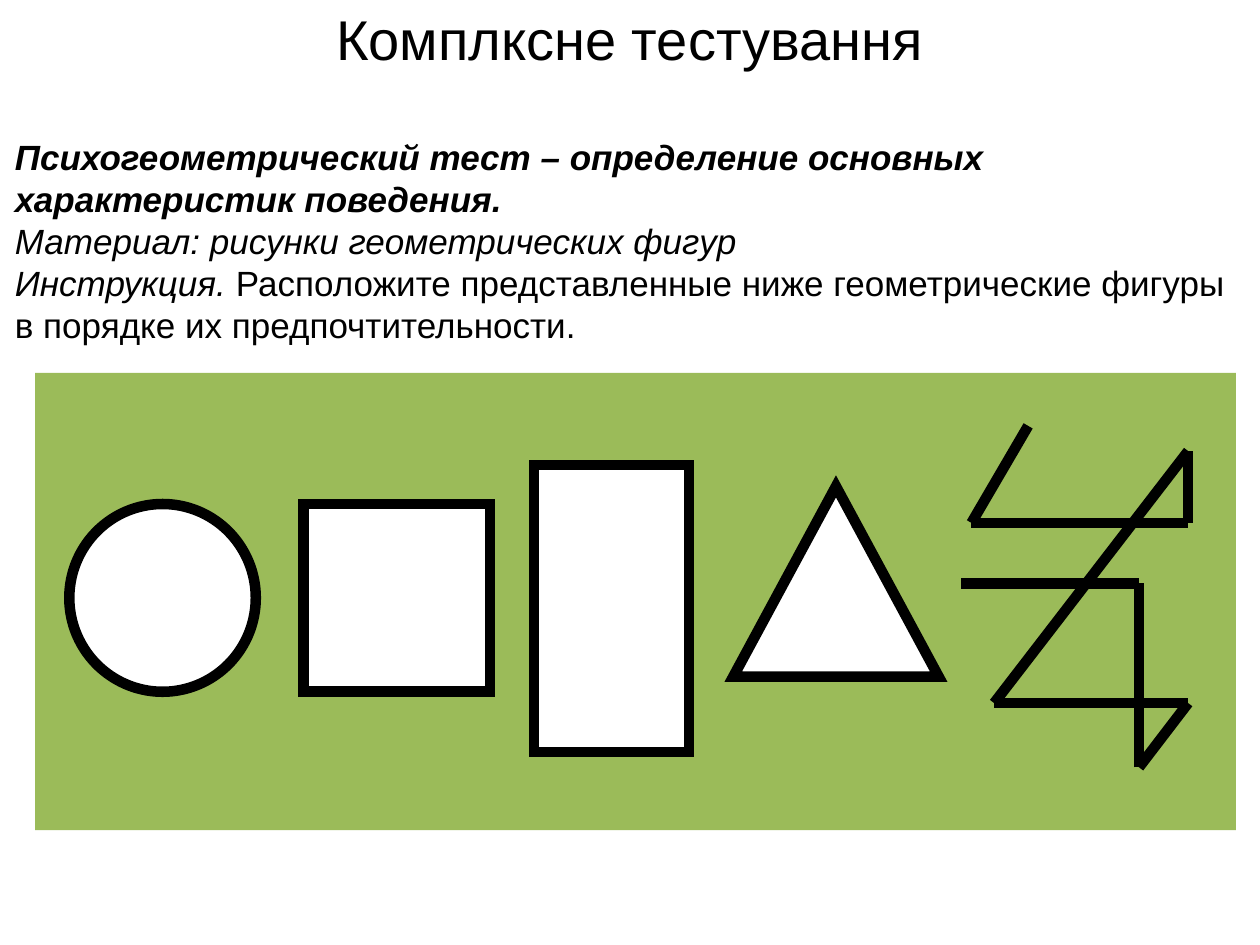
from dataclasses import dataclass
from itertools import pairwise

from lxml.etree import SubElement
from pptx import Presentation
from pptx.dml.color import RGBColor
from pptx.enum.shapes import MSO_CONNECTOR, MSO_SHAPE
from pptx.enum.text import MSO_ANCHOR, PP_ALIGN
from pptx.oxml.ns import qn
from pptx.util import Inches, Pt


@dataclass(frozen=True)
class Theme:
    """Colours, font and sizes of the slide."""
    ink: RGBColor = RGBColor.from_string("000000")
    paper: RGBColor = RGBColor.from_string("FFFFFF")
    field: RGBColor = RGBColor.from_string("9BBB59")
    font: str = "Arial"
    title: int = 32
    body: int = 20
    stroke: int = 6


THEME = Theme()
WIDTH, HEIGHT = Inches(10), Inches(7.5)
COLS, ROWS = 100, 75


def grid(col, row):
    """Turn a column and a row into a point on the slide."""
    return round(WIDTH * col / COLS), round(HEIGHT * row / ROWS)


def box(col, row, cols, rows):
    """Turn a block of grid cells into left, top, width and height."""
    return *grid(col, row), *grid(cols, rows)


def write(slide, area, paras, size, align=PP_ALIGN.LEFT):
    """Add a text box whose paragraphs are lists of (text, bold, italic)."""
    frame = slide.shapes.add_textbox(*box(*area)).text_frame
    frame.word_wrap = True
    frame.vertical_anchor = MSO_ANCHOR.MIDDLE
    for i, runs in enumerate(paras):
        para = frame.add_paragraph() if i else frame.paragraphs[0]
        para.alignment = align
        for text, bold, italic in runs:
            run = para.add_run()
            run.text = text
            font = run.font
            font.name, font.size = THEME.font, Pt(size)
            font.bold, font.italic = bold, italic
            font.color.rgb = THEME.ink


def trace(line):
    """Give a line the thick dark stroke with sharp corners."""
    line.width = Pt(THEME.stroke)
    line.color.rgb = THEME.ink
    SubElement(line._get_or_add_ln(), qn("a:miter"), lim="800000")


def figure(group, kind, area, fill, edge=True):
    """Add a filled shape, outlined if it has an edge."""
    shape = group.shapes.add_shape(kind, *box(*area))
    shape.shadow.inherit = False
    shape.fill.solid()
    shape.fill.fore_color.rgb = fill
    if edge:
        trace(shape.line)
    else:
        shape.line.fill.background()


def zigzag(group, points):
    """Join consecutive grid points with straight lines."""
    for start, end in pairwise(points):
        line = group.shapes.add_connector(
            MSO_CONNECTOR.STRAIGHT, *grid(*start), *grid(*end))
        trace(line.line)
        SubElement(line._element.spPr, qn("a:effectLst"))


def main():
    """Build the slide and save it."""
    deck = Presentation()
    deck.slide_width, deck.slide_height = WIDTH, HEIGHT
    slide = deck.slides.add_slide(deck.slide_layouts[6])

    write(slide, (0, 0, COLS, 6), [[("Комплксне тестування", False, False)]],
          size=THEME.title, align=PP_ALIGN.CENTER)
    write(slide, (0.2, 10.2, COLS, 17.8), [
        [("Психогеометрический тест – определение основных "
          "характеристик поведения.", True, True)],
        [("Материал: рисунки геометрических фигур", False, True)],
        [("Инструкция.", False, True),
         (" Расположите представленные ниже геометрические фигуры "
          "в порядке их предпочтительности.", False, False)],
    ], size=THEME.body)

    group = slide.shapes.add_group_shape()
    figure(group, MSO_SHAPE.RECTANGLE, (2.8, 29.6, 95.3, 36.3),
           THEME.field, edge=False)
    for kind, area in (
        (MSO_SHAPE.OVAL, (5.5, 40, 14.8, 14.9)),
        (MSO_SHAPE.RECTANGLE, (24.1, 40, 14.8, 14.9)),
        (MSO_SHAPE.RECTANGLE, (42.4, 36.9, 12.3, 22.8)),
        (MSO_SHAPE.ISOSCELES_TRIANGLE, (58.2, 38.6, 16.3, 15.1)),
    ):
        figure(group, kind, area, THEME.paper)
    zigzag(group, [
        (81.6, 33.8), (77.1, 41.5), (94.3, 41.5), (94.3, 35.8), (78.9, 55.8),
        (94.3, 55.8), (90.4, 60.9), (90.4, 46.3), (76.3, 46.3)])

    deck.save("out.pptx")


if __name__ == "__main__":
    main()
